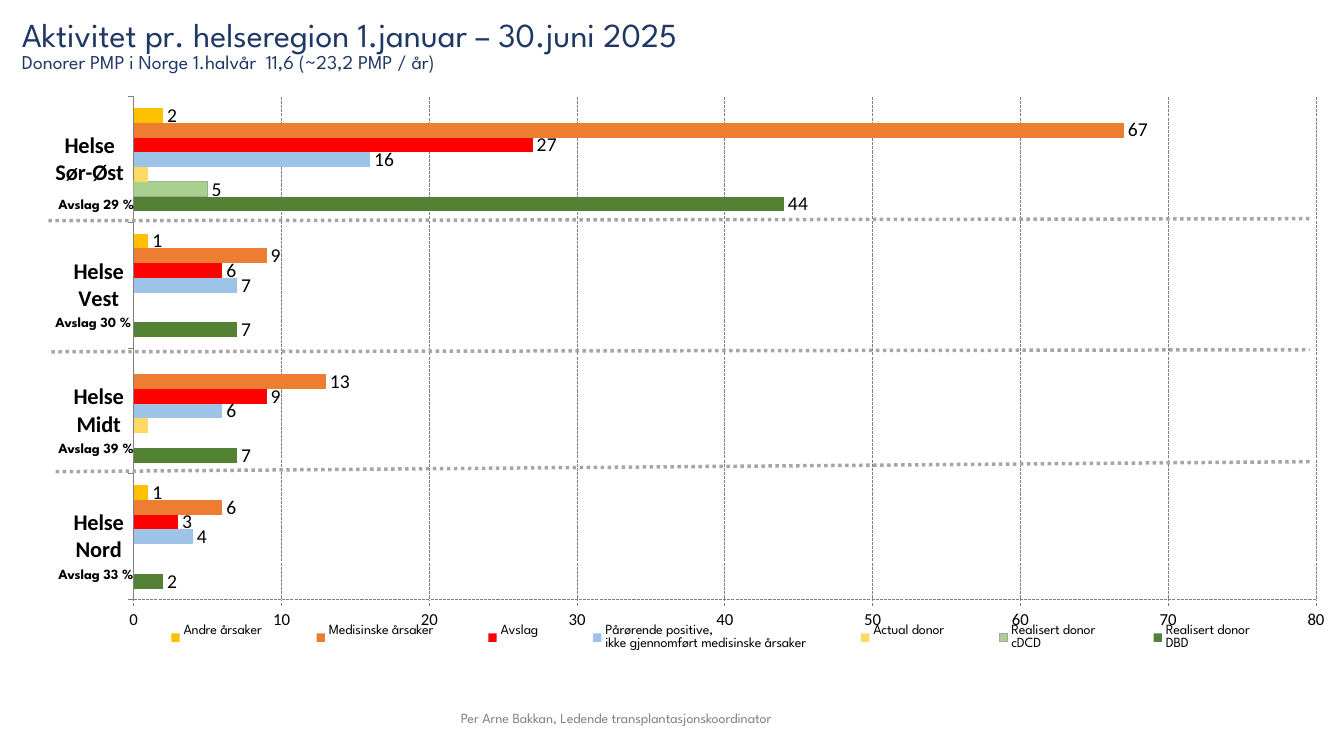
import pptx
import pptx.chart.data
import pptx.dml.color
import pptx.enum.chart
import pptx.enum.dml
import pptx.enum.shapes
import pptx.enum.text
import pptx.oxml
import pptx.util
from pptx.util import Inches, Pt

HEADING_FONT = "League Spartan"


def color(value):
    return pptx.dml.color.RGBColor.from_string(value)


def add_text(text, left, top, width, height, size, hex_color, bold=False):
    box = slide.shapes.add_textbox(Inches(left), Inches(top), Inches(width), Inches(height))
    text_frame = box.text_frame
    text_frame.word_wrap = True
    text_frame.text = text
    font = text_frame.paragraphs[0].runs[0].font
    font.name, font.size, font.bold = HEADING_FONT, Pt(size), bold
    font.color.rgb = color(hex_color)
    return text_frame


presentation = pptx.Presentation()
presentation.slide_width = Inches(13.33)
presentation.slide_height = Inches(7.5)
slide = presentation.slides.add_slide(presentation.slide_layouts[6])

# Chart data: name, values, color, labels shown
series_rows = [
    ("Realisert donor \nDBD", (2, 7, 7, 44), "548235", True),
    ("Realisert donor \ncDCD", (None, None, None, 5), "A9D18E", True),
    ("Actual donor", (None, 1, None, 1), "FFD966", False),
    ("Pårørende positive, \nikke gjennomført medisinske årsaker", (4, 6, 7, 16), "9DC3E6", True),
    ("Avslag", (3, 9, 6, 27), "FF0000", True),
    ("Medisinske årsaker", (6, 13, 9, 67), "ED7D31", True),
    ("Andre årsaker", (1, None, 1, 2), "FFC000", True),
]
chart_data = pptx.chart.data.CategoryChartData()
chart_data.categories = ["Helse Nord", "Helse Midt", "Helse Vest", "Helse Sør-Øst"]
for name, values, _, _ in series_rows:
    chart_data.add_series(name, values)

# Bar chart
chart = slide.shapes.add_chart(
    pptx.enum.chart.XL_CHART_TYPE.BAR_CLUSTERED,
    Inches(0.55), Inches(0.73), Inches(12.63), Inches(5.8), chart_data).chart
chart.has_title = False
chart.font.name = "Calibri"
chart.font.size = Pt(18)
chart.font.color.rgb = color("000000")
plot = chart.plots[0]
plot.gap_width = 150
plot.overlap = 0
plot.vary_by_categories = False
for series, (_, _, fill_color, show_labels) in zip(plot.series, series_rows):
    series.invert_if_negative = False
    series.format.fill.solid()
    series.format.fill.fore_color.rgb = color(fill_color)
    if show_labels:
        labels = series.data_labels
        labels.show_value = True
        labels.position = pptx.enum.chart.XL_LABEL_POSITION.OUTSIDE_END
        labels.font.size = Pt(14)
cdcd_line = plot.series[1].format.line
cdcd_line.color.rgb = color("A6A6A6")
cdcd_line.width = Pt(0.75)

# Axes
category_axis, value_axis = chart.category_axis, chart.value_axis
category_axis.tick_labels.font.size = Pt(16)
category_axis.tick_labels.font.bold = True
category_axis.format.line.color.rgb = color("808080")
value_axis.minimum_scale, value_axis.maximum_scale, value_axis.major_unit = 0, 80, 10
value_axis.tick_labels.font.size = Pt(12)
for axis in (category_axis, value_axis):
    axis.major_tick_mark = pptx.enum.chart.XL_TICK_MARK.OUTSIDE
for line in (value_axis.format.line, value_axis.major_gridlines.format.line):
    line.color.rgb = color("808080")
    line.width = Pt(0.75)
    line.dash_style = pptx.enum.dml.MSO_LINE.SQUARE_DOT

# Legend and manual placement of plot area and legend
chart.has_legend = True
legend = chart.legend
legend.position = pptx.enum.chart.XL_LEGEND_POSITION.TOP
legend.include_in_layout = False
legend.font.size = Pt(10)
legend.font.name = HEADING_FONT
plot_area = chart._chartSpace.chart.plotArea
for element, target, place in (
        (plot_area, '<c:layoutTarget val="inner"/>', (0.06, 0.04, 0.93, 0.86)),
        (legend._element, "", (0.05, 0.93, 0.93, 0.07))):
    for old_layout in element.findall(pptx.oxml.ns.qn("c:layout")):
        element.remove(old_layout)
    modes = '<c:xMode val="edge"/><c:yMode val="edge"/>'
    sizes = "".join(f'<c:{key} val="{value}"/>' for key, value in zip("xywh", place))
    layout = pptx.oxml.parse_xml(
        f'<c:layout {pptx.oxml.ns.nsdecls("c")}><c:manualLayout>'
        f'{target}{modes}{sizes}</c:manualLayout></c:layout>')
    element.insert(0 if element is plot_area else 1, layout)

# Dotted dividers between the regions
for start_x, start_y, end_x, end_y in (
        (0.48, 2.19, 13.01, 2.17), (0.51, 3.49, 12.99, 3.47), (12.99, 4.58, 0.52, 4.68)):
    divider = slide.shapes.add_connector(
        pptx.enum.shapes.MSO_CONNECTOR.STRAIGHT,
        Inches(start_x), Inches(start_y), Inches(end_x), Inches(end_y))
    divider.line.color.rgb = color("A6A6A6")
    divider.line.width = Pt(2.5)
    divider.line.dash_style = pptx.enum.dml.MSO_LINE.ROUND_DOT
    divider._element.spPr.append(
        pptx.oxml.parse_xml(f'<a:effectLst {pptx.oxml.ns.nsdecls("a")}/>'))

# Refusal rates
for percent, left, top in ((29, 0.48, 1.89), (30, 0.45, 3.06), (39, 0.48, 4.31), (33, 0.48, 5.56)):
    add_text(f"Avslag {percent} %", left, top, 1.49, 0.27, 10, "000000", bold=True)

# Title, subtitle and footer
title = add_text("Aktivitet pr. helseregion 1.januar – 30.juni 2025",
                 0.12, 0.13, 11.5, 0.47, 24, "203864")
title.vertical_anchor = pptx.enum.text.MSO_ANCHOR.MIDDLE
title.paragraphs[0].line_spacing = 0.9
add_text("Donorer PMP i Norge 1.halvår  11,6 (~23,2 PMP / år)",
         0.12, 0.45, 7.23, 0.34, 14, "203864")
footer = add_text("Per Arne Bakkan, Ledende transplantasjonskoordinator",
                  4.53, 6.98, 4.69, 0.22, 10, "808080")
footer.margin_left = footer.margin_right = Inches(0.04)
footer.margin_top = footer.margin_bottom = Inches(0.04)
footer.paragraphs[0].line_spacing = 1.1

presentation.save("out.pptx")
